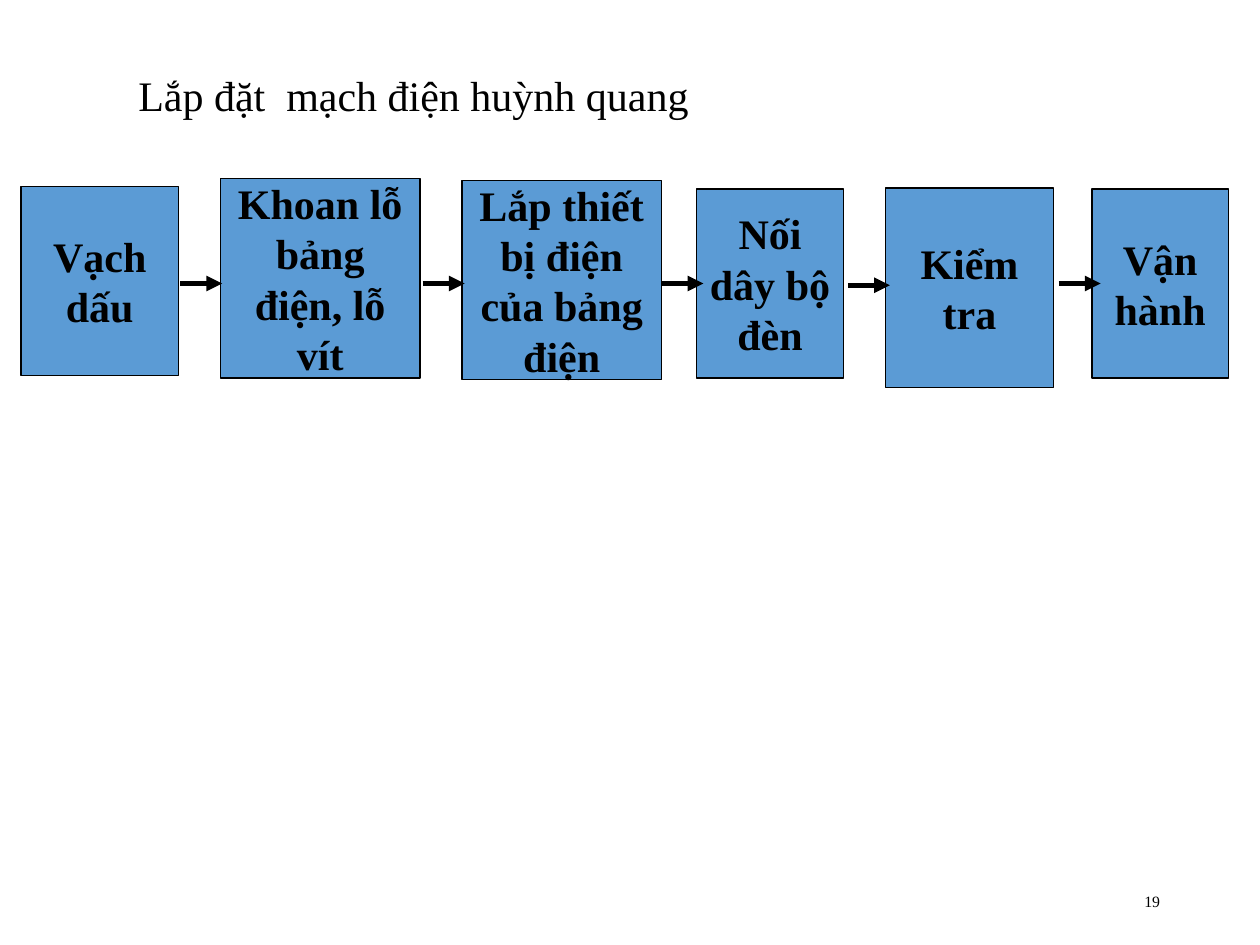
from dataclasses import dataclass

from lxml import etree
from pptx import Presentation
from pptx import util as u
from pptx.dml.color import RGBColor
from pptx.enum import shapes, text
from pptx.oxml.ns import qn
from pptx.slide import Slide

BLACK = RGBColor(0x00, 0x00, 0x00)
BLUE = RGBColor(0x5B, 0x9B, 0xD5)

# text, left, top, width, height
STEPS = [
    ("Vạch dấu", 12, 106.5, 90, 108),
    ("Khoan lỗ bảng điện, lỗ vít", 126, 102, 114, 114),
    ("Lắp thiết bị điện của bảng điện", 264, 103, 114, 114),
    ("Nối dây bộ đèn", 398, 108, 84, 108),
    ("Kiểm tra", 506, 107.5, 96, 114),
    ("Vận hành", 624, 108, 78, 108),
]
ARROW_LENGTH = 24
ARROW_STARTS = [(103, 162), (241.5, 162), (378, 162), (484.5, 163), (605, 162)]


@dataclass
class FlowSlide:
    slide: Slide
    font_name: str = "Times New Roman"
    font_size: float = 24

    def set_text(self, shape, wording, alignment, size=None, bold=False,
                 anchor=text.MSO_ANCHOR.MIDDLE):
        frame = shape.text_frame
        frame.text = wording
        frame.word_wrap = True
        frame.vertical_anchor = anchor
        paragraph = frame.paragraphs[0]
        paragraph.alignment = alignment
        for run in paragraph.runs:
            run.font.name = self.font_name
            run.font.size = u.Pt(size or self.font_size)
            run.font.bold = bold
            run.font.color.rgb = BLACK

    def label(self, wording, left, top, width, height, alignment, **style):
        box = self.slide.shapes.add_textbox(*map(u.Pt, (left, top, width, height)))
        self.set_text(box, wording, alignment, **style)

    def step(self, wording, left, top, width, height):
        box = self.slide.shapes.add_shape(
            shapes.MSO_SHAPE.RECTANGLE, *map(u.Pt, (left, top, width, height)))
        box.shadow.inherit = False
        box.fill.solid()
        box.fill.fore_color.rgb = BLUE
        box.line.color.rgb = BLACK
        box.line.width = u.Pt(0.75)
        self.set_text(box, wording, text.PP_ALIGN.CENTER, bold=True)

    def arrow(self, left, top):
        connector = self.slide.shapes.add_connector(
            shapes.MSO_CONNECTOR.STRAIGHT,
            *map(u.Pt, (left, top, left + ARROW_LENGTH, top)))
        connector.line.color.rgb = BLACK
        connector.line.width = u.Pt(3)
        properties = connector._element.spPr
        line = properties.find(qn("a:ln"))
        etree.SubElement(line, qn("a:tailEnd"), type="triangle")
        etree.SubElement(properties, qn("a:effectLst"))


def main():
    presentation = Presentation()
    presentation.slide_width = u.Pt(720)
    presentation.slide_height = u.Pt(540)
    flow = FlowSlide(presentation.slides.add_slide(presentation.slide_layouts[6]))

    flow.label("19", 508, 500.5, 162, 29, text.PP_ALIGN.RIGHT, size=9)
    flow.label("Lắp đặt  mạch điện huỳnh quang", 72, 36, 438, 36,
               text.PP_ALIGN.LEFT, anchor=text.MSO_ANCHOR.TOP)
    for step in STEPS:
        flow.step(*step)
    for start in ARROW_STARTS:
        flow.arrow(*start)

    presentation.save("out.pptx")


if __name__ == "__main__":
    main()
